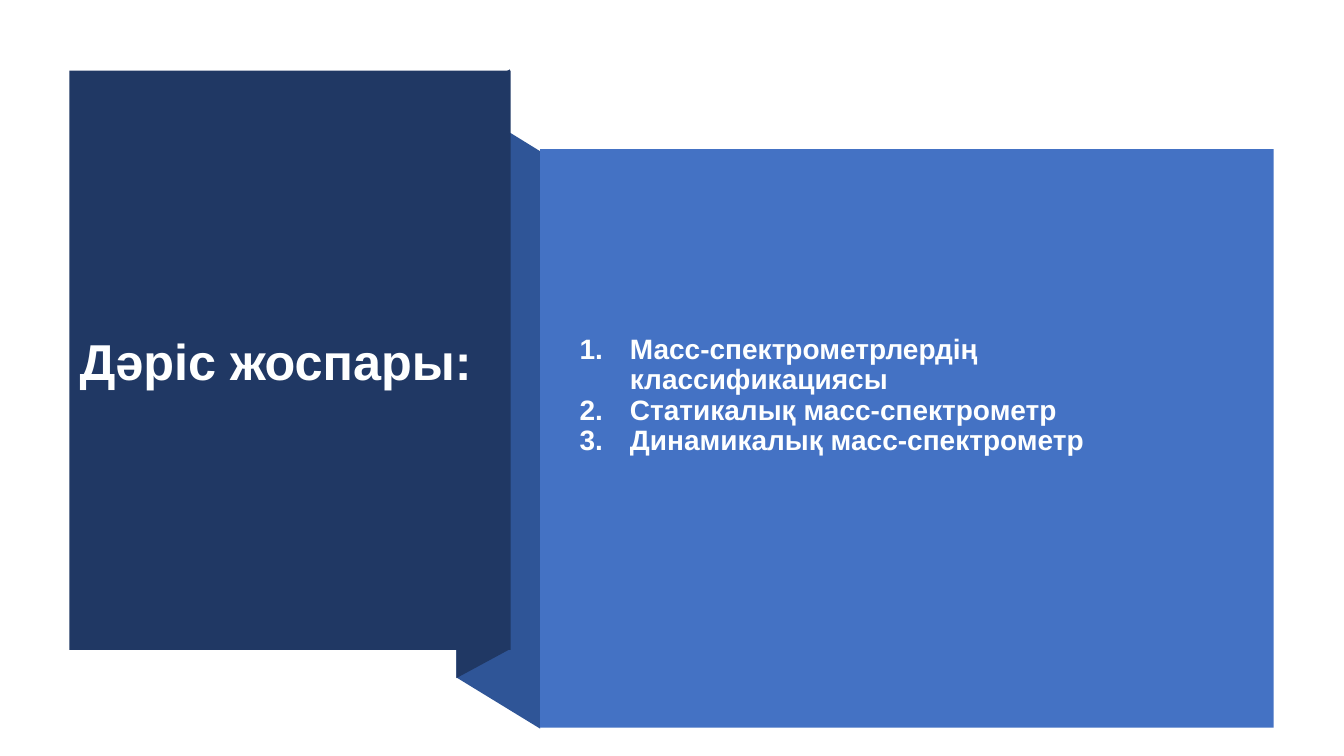
import pptx
import pptx.dml.color
import pptx.enum.shapes
import pptx.enum.text
import pptx.oxml.ns
import pptx.util
from pptx.util import Cm

NAVY, MID, BLUE, WHITE = "203864", "2F5597", "4472C4", "FEFFFF"
FOLD = 11.5
TOPICS = [
    "Масс-спектрометрлердің классификациясы",
    "Статикалық масс-спектрометр",
    "Динамикалық масс-спектрометр",
]


def rgb(color):
    return pptx.dml.color.RGBColor.from_string(color)


def paint(shape, color):
    shape.shadow.inherit = False
    shape.fill.solid()
    shape.fill.fore_color.rgb = rgb(color)
    shape.line.fill.background()


def panel(slide, box, color):
    kind = pptx.enum.shapes.MSO_SHAPE.RECTANGLE
    paint(slide.shapes.add_shape(kind, *map(Cm, box)), color)


def flap(slide, points, color):
    first, *rest = [(Cm(x), Cm(y)) for x, y in points]
    path = slide.shapes.build_freeform(*first)
    path.add_line_segments(rest, close=True)
    paint(path.convert_to_shape(), color)


def write(slide, holder, box, lines, size, anchor):
    """Fill a placeholder and bring it in front of the panels."""
    holder.left, holder.top, holder.width, holder.height = map(Cm, box)
    slide.shapes._spTree.append(holder._element)
    frame = holder.text_frame
    frame.text = "\n".join(lines)
    frame.word_wrap = True
    frame.auto_size = pptx.enum.text.MSO_AUTO_SIZE.NONE
    frame.vertical_anchor = anchor
    for para in frame.paragraphs:
        para.alignment = pptx.enum.text.PP_ALIGN.LEFT
        para.space_before = pptx.util.Pt(0)
        for run in para.runs:
            font = run.font
            font.name, font.size, font.bold = "Arial", pptx.util.Pt(size), True
            font.color.rgb = rgb(WHITE)
    return frame


def number(para, indent):
    para.line_spacing = 0.9
    props = para._p.get_or_add_pPr()
    props.set("marL", str(indent))
    props.set("indent", str(-indent))
    mark = props.makeelement(pptx.oxml.ns.qn("a:buAutoNum"), {"type": "arabicPeriod"})
    props.append(mark)


def main():
    deck = pptx.Presentation()
    deck.slide_width, deck.slide_height = Cm(33.87), Cm(19.05)
    slide = deck.slides.add_slide(deck.slide_layouts[1])
    title, body = slide.placeholders

    flap(slide, [(13.61, 18.36), (FOLD, 17.07), (FOLD, 2.51), (13.61, 3.81)], MID)
    flap(slide, [(12.85, 16.36), (FOLD, 17.09), (FOLD, 2.49), (12.85, 1.75)], NAVY)
    panel(slide, (1.75, 1.78, 11.12, 14.6), NAVY)
    panel(slide, (13.61, 3.76, 18.49, 14.58), BLUE)

    anchor = pptx.enum.text.MSO_ANCHOR
    plan = write(slide, body, (14.35, 4.34, 16.54, 12.04), TOPICS, 20, anchor.MIDDLE)
    plan.margin_bottom = Cm(0.89)
    for para in plan.paragraphs:
        number(para, Cm(1.27))
    write(slide, title, (1.75, 8.18, 12.01, 1.8), ["Дәріс жоспары:"], 36, anchor.TOP)

    deck.save("out.pptx")


if __name__ == "__main__":
    main()
